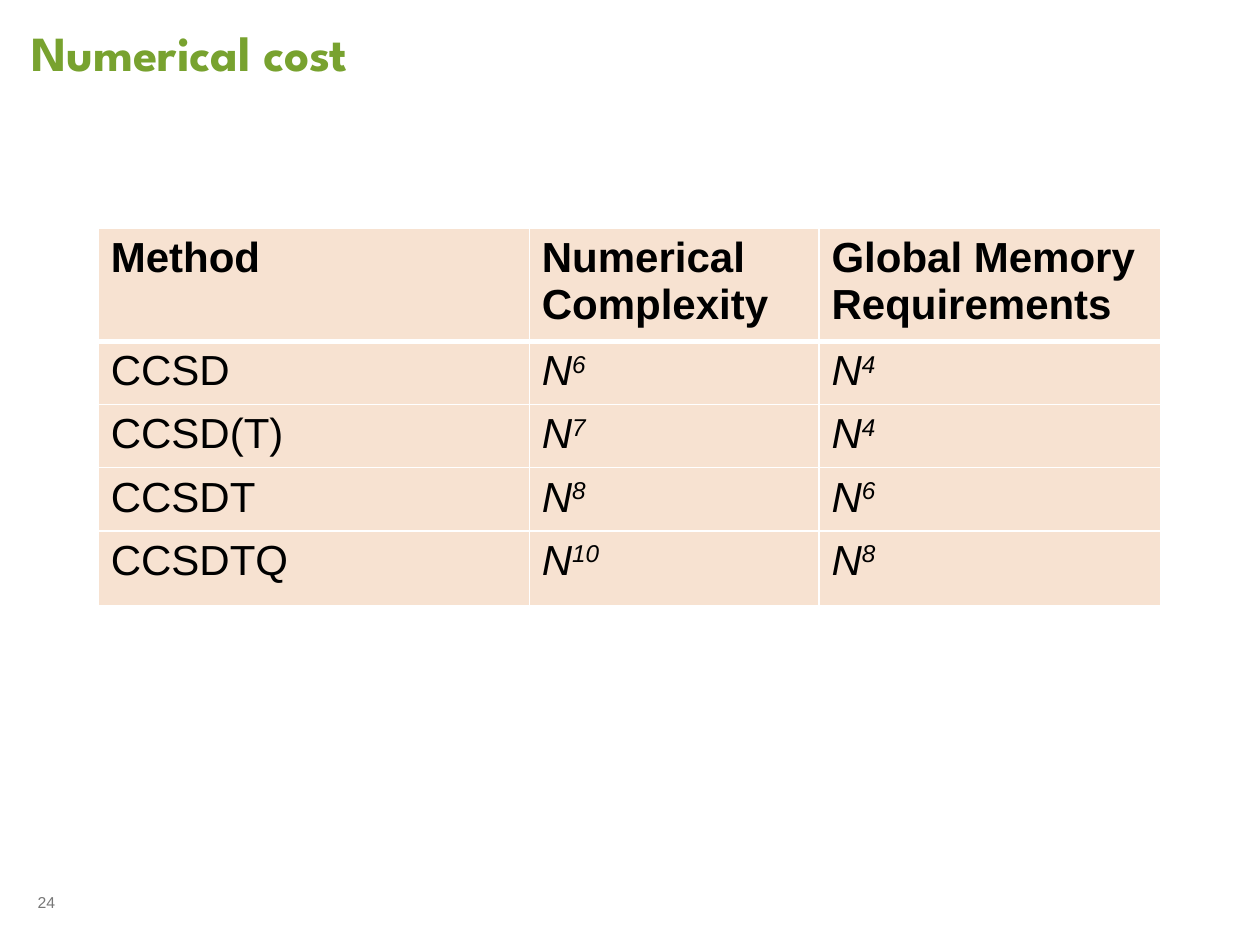
import lxml.etree
import pptx
import pptx.dml.color
import pptx.enum.text
import pptx.oxml.ns
import pptx.util

Cm = pptx.util.Cm
Pt = pptx.util.Pt
COLORS = {"title": "78A22F", "number": "777777", "text": "000000",
          "cell": "F7E2D1", "border": "FFFFFF"}


def write_text(text_frame, text, font="Arial", size=24, color="text", bold=False,
               italic=False, exponent="", line_spacing=None):
    """Write one paragraph per line of text; an exponent follows the last line."""
    for index, line in enumerate(text.split("\n")):
        paragraph = text_frame.paragraphs[0] if index == 0 else text_frame.add_paragraph()
        paragraph.line_spacing = line_spacing
        paragraph.add_run().text = line
    if exponent:
        run = paragraph.add_run()
        run.text = exponent
        run.font._element.set("baseline", "30000")
    for paragraph in text_frame.paragraphs:
        for run in paragraph.runs:
            run.font.name = font
            run.font.size = Pt(size)
            run.font.bold = bold
            run.font.italic = italic
            run.font.color.rgb = pptx.dml.color.RGBColor.from_string(COLORS[color])


def set_border(cell, side, width):
    properties = cell._tc.get_or_add_tcPr()
    line = lxml.etree.SubElement(properties, pptx.oxml.ns.qn(f"a:ln{side}"), w=str(Pt(width)))
    fill = lxml.etree.SubElement(line, pptx.oxml.ns.qn("a:solidFill"))
    lxml.etree.SubElement(fill, pptx.oxml.ns.qn("a:srgbClr"), val=COLORS["border"])


presentation = pptx.Presentation()
presentation.slide_width = Cm(25.4)
presentation.slide_height = Cm(19.05)
slide = presentation.slides.add_slide(presentation.slide_layouts[6])

# Title
title = slide.shapes.add_textbox(Cm(0.64), Cm(0.64), Cm(18.42), Cm(1.52)).text_frame
title.word_wrap = True
title.margin_left = title.margin_top = title.margin_right = title.margin_bottom = 0
write_text(title, "Numerical cost", font="League Spartan", size=28, color="title",
           bold=True, line_spacing=0.85)

# Table of methods: name, exponent of complexity, exponent of memory
headers = ["Method", "Numerical\nComplexity", "Global Memory\nRequirements"]
methods = [("CCSD", "6", "4"), ("CCSD(T)", "7", "4"),
           ("CCSDT", "8", "6"), ("CCSDTQ", "10", "8")]
column_widths = [8.69, 5.84, 6.88]
row_heights = [2.12, 1.2, 1.2, 1.2, 1.52]

table = slide.shapes.add_table(len(row_heights), len(column_widths), Cm(1.98), Cm(4.6),
                               Cm(sum(column_widths)), Cm(sum(row_heights))).table
for column, width in zip(table.columns, column_widths):
    column.width = Cm(width)
for row, height in zip(table.rows, row_heights):
    row.height = Cm(height)

for row_index, values in enumerate([headers, *methods]):
    for column_index, value in enumerate(values):
        cell = table.cell(row_index, column_index)
        if row_index == 0:
            write_text(cell.text_frame, value, bold=True)
        elif column_index == 0:
            write_text(cell.text_frame, value)
        else:
            write_text(cell.text_frame, "N", italic=True, exponent=value)
        for side in "LRTB":
            under_header = (row_index, side) in [(0, "B"), (1, "T")]
            set_border(cell, side, 3 if under_header else 1)
        cell.fill.solid()
        cell.fill.fore_color.rgb = pptx.dml.color.RGBColor.from_string(COLORS["cell"])

# Slide number
number = slide.shapes.add_textbox(Cm(0.51), Cm(17.86), Cm(1.7), Cm(0.64)).text_frame
number.word_wrap = True
number.vertical_anchor = pptx.enum.text.MSO_ANCHOR.MIDDLE
write_text(number, "24", size=9, color="number")

presentation.save("out.pptx")
